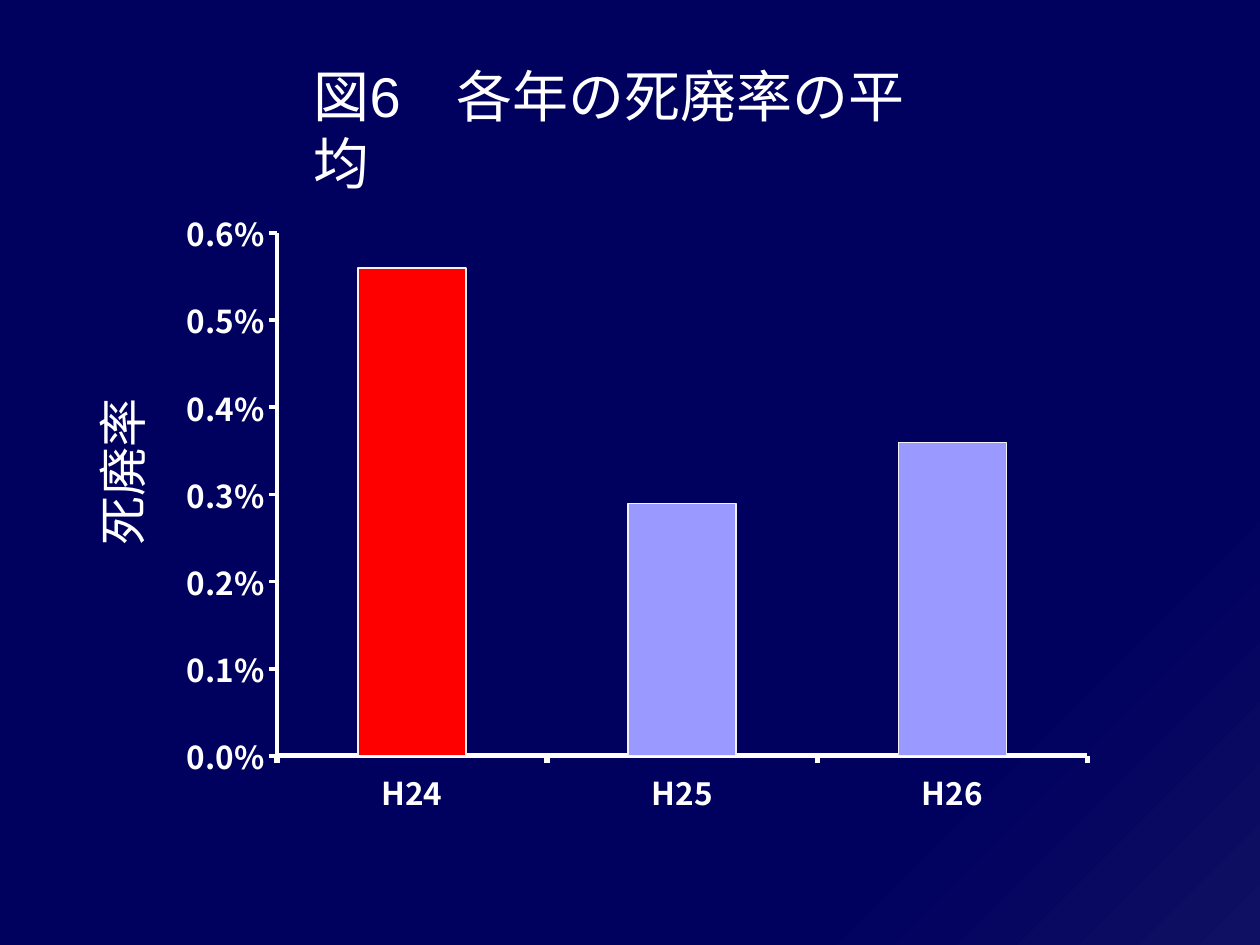
import pptx
import pptx.chart.data
import pptx.dml.color
import pptx.enum.chart
import pptx.enum.text
import pptx.oxml
import pptx.oxml.ns
import pptx.util
from dataclasses import dataclass
from lxml import etree

Inches = pptx.util.Inches
Pt = pptx.util.Pt
qn = pptx.oxml.ns.qn


def rgb(value):
    return pptx.dml.color.RGBColor.from_string(value)


@dataclass(frozen=True)
class Theme:
    navy: str = "00005F"
    navy_light: str = "0F0F63"
    white: str = "FFFFFF"
    outline: str = "F2F2F2"
    red: str = "FF0000"
    lavender: str = "9999FF"
    latin_font: str = "Arial"
    chart_font: str = "Calibri"
    japanese_font: str = "Noto Sans CJK JP"
    title_size: int = 32
    label_size: int = 28
    axis_size: int = 18
    chart_size: int = 10


class SlideBuilder:
    def __init__(self, presentation, theme):
        self.theme = theme
        self.slide = presentation.slides.add_slide(presentation.slide_layouts[6])

    def background(self):
        fill = self.slide.background.fill
        fill.gradient()
        fill.gradient_angle = 315
        stops = ((0.78, self.theme.navy), (1.0, self.theme.navy_light))
        for stop, (position, color) in zip(fill.gradient_stops, stops):
            stop.position = position
            stop.color.rgb = rgb(color)

    def text(self, text, left, top, width, height, size, font, wrap=False, rotation=0):
        shape = self.slide.shapes.add_textbox(
            Inches(left), Inches(top), Inches(width), Inches(height))
        shape.rotation = rotation
        frame = shape.text_frame
        frame.word_wrap = wrap
        frame.auto_size = pptx.enum.text.MSO_AUTO_SIZE.SHAPE_TO_FIT_TEXT
        frame.text = text
        run = frame.paragraphs[0].runs[0]
        run.font.size = Pt(size)
        run.font.name = font
        run.font.color.rgb = rgb(self.theme.white)
        east_asian = etree.SubElement(run.font._element, qn("a:ea"))
        east_asian.set("typeface", self.theme.japanese_font)

    def column_chart(self, categories, values, colors, left, top, width, height):
        data = pptx.chart.data.CategoryChartData(number_format="0.0%")
        data.categories = categories
        data.add_series("Series 1", values)
        chart = self.slide.shapes.add_chart(
            pptx.enum.chart.XL_CHART_TYPE.COLUMN_CLUSTERED,
            Inches(left), Inches(top), Inches(width), Inches(height), data).chart
        chart.has_title = False
        chart.has_legend = False
        chart.font.size = Pt(self.theme.chart_size)
        chart.font.name = self.theme.chart_font
        chart.font.color.rgb = rgb(self.theme.white)

        # Columns
        plot = chart.plots[0]
        plot.gap_width = 150
        plot.vary_by_categories = False
        series = plot.series[0]
        self.paint(series.format, self.theme.navy)
        for index, color in enumerate(colors):
            self.paint(series.points[index].format, color)

        # Axes
        self.axis(chart.category_axis, 3)
        self.axis(chart.value_axis, 2.25)
        chart.value_axis.minimum_scale = 0
        chart.value_axis.maximum_scale = 0.006
        chart.value_axis.major_unit = 0.001
        chart.value_axis.tick_labels.number_format = "0.0%"
        chart.value_axis.tick_labels.number_format_is_linked = False
        self.plot_layout(chart, x=0.12, y=0.06, w=0.86, h=0.83)

    def paint(self, target, color):
        target.fill.solid()
        target.fill.fore_color.rgb = rgb(color)
        target.line.color.rgb = rgb(self.theme.outline)
        target.line.width = Pt(0.75)

    def axis(self, axis, line_width):
        axis.has_major_gridlines = False
        axis.major_tick_mark = pptx.enum.chart.XL_TICK_MARK.OUTSIDE
        axis.minor_tick_mark = pptx.enum.chart.XL_TICK_MARK.NONE
        axis.format.line.color.rgb = rgb(self.theme.white)
        axis.format.line.width = Pt(line_width)
        font = axis.tick_labels.font
        font.size = Pt(self.theme.axis_size)
        font.bold = True
        font.name = self.theme.japanese_font
        font.color.rgb = rgb(self.theme.white)

    def plot_layout(self, chart, **box):
        plot_area = chart._chartSpace.chart.plotArea
        layout = plot_area.find(qn("c:layout"))
        if layout is None:
            layout = pptx.oxml.parse_xml(
                "<c:layout %s/>" % pptx.oxml.ns.nsdecls("c"))
            plot_area.insert(0, layout)
        manual = etree.SubElement(layout, qn("c:manualLayout"))
        settings = {"layoutTarget": "inner", "xMode": "edge", "yMode": "edge", **box}
        for name, value in settings.items():
            etree.SubElement(manual, qn("c:" + name)).set("val", str(value))


def main():
    presentation = pptx.Presentation()
    presentation.slide_width = Inches(10)
    presentation.slide_height = Inches(7.5)
    theme = Theme()
    builder = SlideBuilder(presentation, theme)
    builder.background()

    # Mortality rate by year
    builder.column_chart(
        ("H24", "H25", "H26"), (0.0056, 0.0029, 0.0036),
        (theme.red, theme.lavender, theme.lavender), 1.3, 1.55, 7.48, 5)

    # Axis label and title
    builder.text("死廃率", 0.28, 3.45, 1.38, 0.57, theme.label_size,
                 theme.japanese_font, rotation=270)
    builder.text("図6　各年の死廃率の平均", 2.39, 0.44, 5.21, 0.64, theme.title_size,
                 theme.latin_font, wrap=True)
    presentation.save("out.pptx")


if __name__ == "__main__":
    main()
